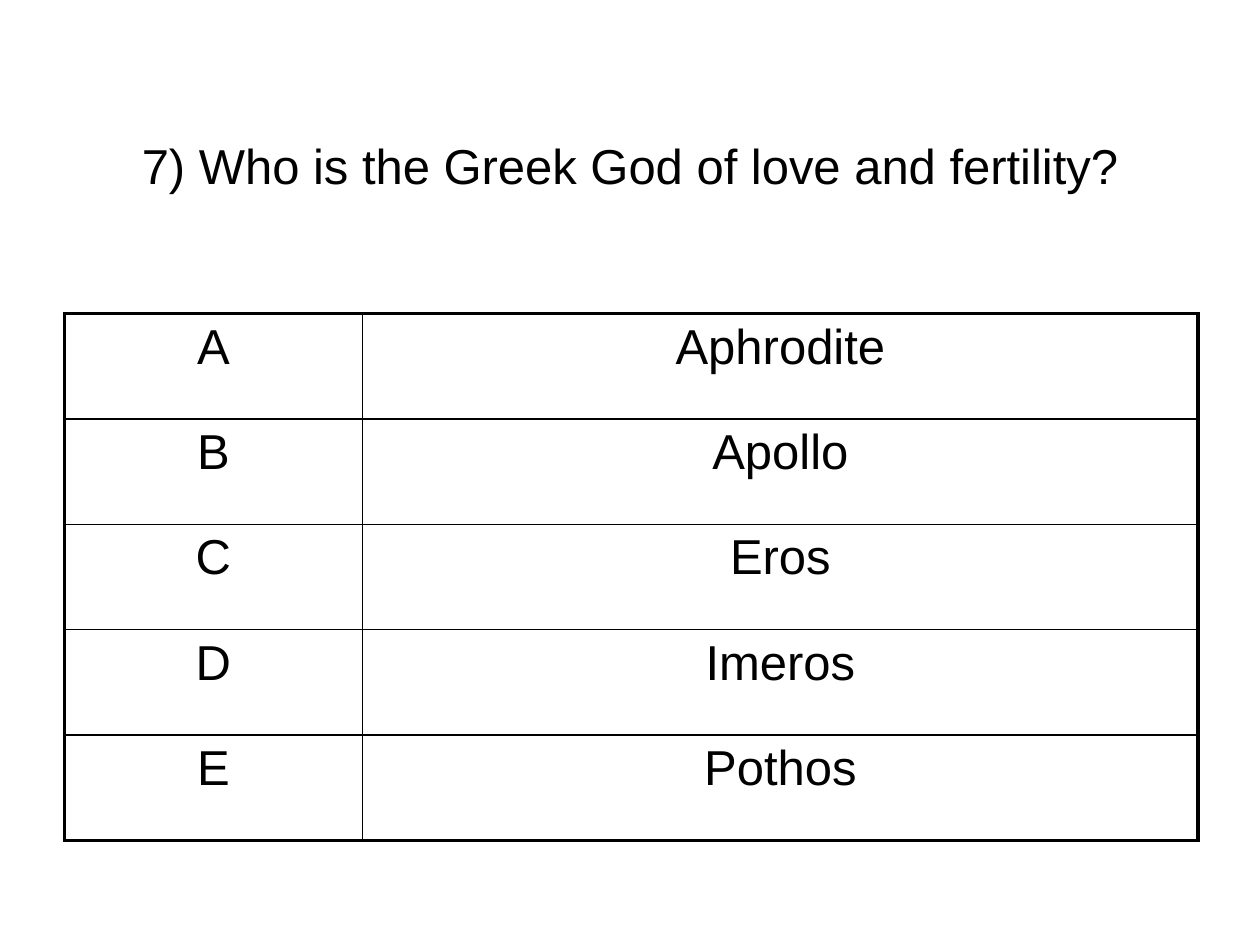
from dataclasses import dataclass

from lxml import etree
from pptx import Presentation
from pptx.dml.color import RGBColor
from pptx.enum import text
from pptx.oxml import ns
from pptx.util import Inches, Pt

SLIDE_WIDTH, SLIDE_HEIGHT = 10, 7.5
BLACK, WHITE = "000000", "FFFFFF"
OUTER_LINE, INNER_LINE = 2.25, 1


@dataclass(frozen=True)
class Answer:
    letter: str
    name: str


@dataclass(frozen=True)
class Box:
    left: float
    top: float
    width: float
    height: float

    def lengths(self) -> tuple:
        return tuple(map(Inches, (self.left, self.top, self.width, self.height)))


QUESTION = "7) Who is the Greek God of love and fertility?"
ANSWERS = [
    Answer("A", "Aphrodite"),
    Answer("B", "Apollo"),
    Answer("C", "Eros"),
    Answer("D", "Imeros"),
    Answer("E", "Pothos"),
]
TITLE_BOX = Box(0.05 * SLIDE_WIDTH, 0.04 * SLIDE_HEIGHT, 0.9 * SLIDE_WIDTH, 0.27 * SLIDE_HEIGHT)
TABLE_BOX = Box(0.51, 2.49, 0.9 * SLIDE_WIDTH, 4.18)
LETTER_SHARE = 0.263


def colour(value: str) -> RGBColor:
    return RGBColor.from_string(value)


def write(frame, words: str, *, size: float = 28, font: str = "Arial",
          ink: str = BLACK, before_percent: int = 0) -> None:
    frame.word_wrap = True
    paragraph = frame.paragraphs[0]
    paragraph.alignment = text.PP_ALIGN.CENTER
    if before_percent:
        spacing = etree.SubElement(paragraph._p.get_or_add_pPr(), ns.qn("a:spcBef"))
        etree.SubElement(spacing, ns.qn("a:spcPct"), val=str(before_percent * 1000))
    run = paragraph.add_run()
    run.text = words
    run.font.size = Pt(size)
    run.font.name = font
    run.font.color.rgb = colour(ink)


def set_borders(cell, widths: dict[str, float]) -> None:
    properties = cell._tc.get_or_add_tcPr()
    for position, (side, width) in enumerate(widths.items()):
        line = etree.Element(ns.qn(f"a:ln{side}"), w=str(Pt(width)))
        fill = etree.SubElement(line, ns.qn("a:solidFill"))
        etree.SubElement(fill, ns.qn("a:srgbClr"), val=BLACK)
        properties.insert(position, line)


def add_title(slide, words: str, box: Box) -> None:
    frame = slide.shapes.add_textbox(*box.lengths()).text_frame
    frame.vertical_anchor = text.MSO_ANCHOR.MIDDLE
    write(frame, words)


def add_answers(slide, answers: list[Answer], box: Box) -> None:
    table = slide.shapes.add_table(len(answers), 2, *box.lengths()).table
    table.first_row = table.horz_banding = False
    for column, share in zip(table.columns, (LETTER_SHARE, 1 - LETTER_SHARE)):
        column.width = Inches(box.width * share)
    last_row = len(answers) - 1
    for row, answer in enumerate(answers):
        for column, words in enumerate((answer.letter, answer.name)):
            cell = table.cell(row, column)
            cell.fill.background()
            write(cell.text_frame, words, before_percent=20)
            on_edge = {"L": column == 0, "R": column == 1, "T": row == 0, "B": row == last_row}
            set_borders(cell, {side: OUTER_LINE if edge else INNER_LINE
                               for side, edge in on_edge.items()})


def main() -> None:
    presentation = Presentation()
    presentation.slide_width = Inches(SLIDE_WIDTH)
    presentation.slide_height = Inches(SLIDE_HEIGHT)
    slide = presentation.slides.add_slide(presentation.slide_layouts[6])
    slide.background.fill.solid()
    slide.background.fill.fore_color.rgb = colour(WHITE)
    add_title(slide, QUESTION, TITLE_BOX)
    add_answers(slide, ANSWERS, TABLE_BOX)
    presentation.save("out.pptx")


if __name__ == "__main__":
    main()
